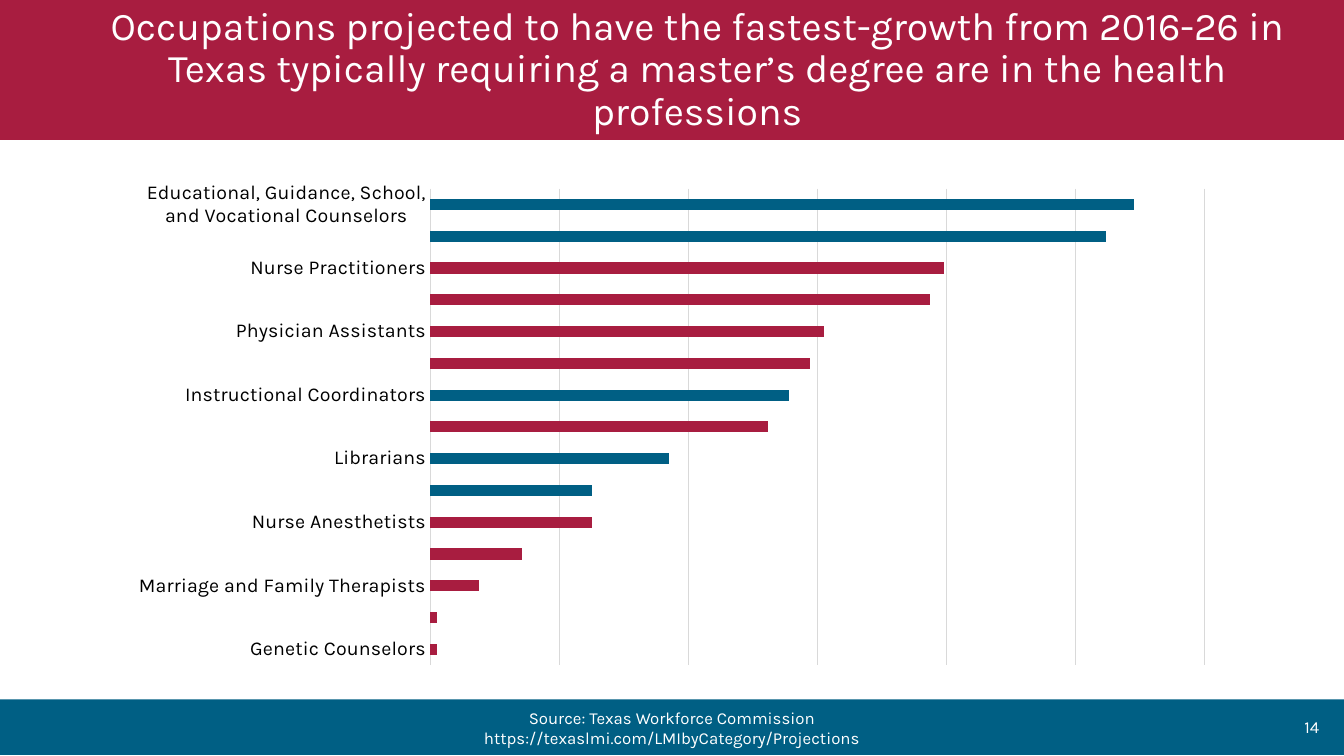
from lxml.etree import SubElement
from pptx import Presentation
from pptx.chart.data import CategoryChartData
from pptx.dml.color import RGBColor
from pptx.enum.chart import XL_CHART_TYPE, XL_TICK_LABEL_POSITION, XL_TICK_MARK
from pptx.enum.shapes import MSO_SHAPE
from pptx.enum.text import MSO_ANCHOR, MSO_AUTO_SIZE, PP_ALIGN
from pptx.oxml import parse_xml
from pptx.oxml.ns import nsdecls, qn
from pptx.util import Pt

CRIMSON = RGBColor(0xA8, 0x1D, 0x40)
TEAL = RGBColor(0x00, 0x5F, 0x84)
WHITE = RGBColor(0xFF, 0xFF, 0xFF)
BLACK = RGBColor(0x00, 0x00, 0x00)
GRID = RGBColor(0xD9, 0xD9, 0xD9)
FONT = "Karla"

TITLE = ("Occupations projected to have the fastest-growth from 2016-26 in Texas "
         "typically requiring a master’s degree are in the health professions")
SOURCE = "Source: Texas Workforce Commission https://texaslmi.com/LMIbyCategory/Projections"
PAGE_NUMBER = "14"

# label, projected growth, bar colour (bottom bar first; every second bar is unlabelled)
OCCUPATIONS = [
    ("Genetic Counselors", 1, CRIMSON),
    ("", 1, CRIMSON),
    ("Marriage and Family Therapists", 7, CRIMSON),
    ("", 13, CRIMSON),
    ("Nurse Anesthetists", 23, CRIMSON),
    ("", 23, TEAL),
    ("Librarians", 34, TEAL),
    ("", 48, CRIMSON),
    ("Instructional Coordinators", 51, TEAL),
    ("", 54, CRIMSON),
    ("Physician Assistants", 56, CRIMSON),
    ("", 71, CRIMSON),
    ("Nurse Practitioners", 73, CRIMSON),
    ("", 96, TEAL),
    ("Educational, Guidance, School, and Vocational Counselors", 100, TEAL),
]
AXIS_MAX = 110
GRID_STEPS = 6
PLOT_LAYOUT = {"x": 0.28, "y": 0.03, "w": 0.7, "h": 0.94}

# left, top, width, height in points
PAGE_WIDTH, PAGE_HEIGHT = 960, 540
TITLE_BAND = (0, 0, PAGE_WIDTH, 100)
FOOTER_BAND = (0, 499.6, PAGE_WIDTH, 39.6)
SOURCE_BOX = (283.5, 505.4, 393, 28.8)
NUMBER_BOX = (733.5, 505, 216, 28.8)
CHART_BOX = (86, 124, 790, 362)


def points(box):
    return [Pt(value) for value in box]


def set_format(target, values):
    for name, value in values.items():
        setattr(target, name, value)


def set_font(font, size, color):
    set_format(font, {"name": FONT, "size": Pt(size)})
    font.color.rgb = color


def paint(shape, color):
    shape.fill.solid()
    shape.fill.fore_color.rgb = color
    shape.line.fill.background()


def add_title(page):
    title = page.shapes.title
    set_format(title, dict(zip(("left", "top", "width", "height"), points(TITLE_BAND))))
    paint(title, CRIMSON)
    frame = title.text_frame
    frame.text = TITLE
    set_format(frame, {"word_wrap": True, "auto_size": MSO_AUTO_SIZE.NONE,
                       "vertical_anchor": MSO_ANCHOR.MIDDLE,
                       "margin_left": Pt(8), "margin_right": Pt(8)})
    para = frame.paragraphs[0]
    set_format(para, {"alignment": PP_ALIGN.CENTER, "line_spacing": 0.9})
    properties = para._p.get_or_add_pPr()
    properties.set("marL", str(Pt(36)))
    properties.set("indent", "0")
    set_font(para.runs[0].font, 28, WHITE)


def add_footer(page):
    band = page.shapes.add_shape(MSO_SHAPE.RECTANGLE, *points(FOOTER_BAND))
    band.shadow.inherit = False
    paint(band, TEAL)

    for text, box, align in ((SOURCE, SOURCE_BOX, PP_ALIGN.CENTER),
                             (PAGE_NUMBER, NUMBER_BOX, PP_ALIGN.RIGHT)):
        frame = page.shapes.add_textbox(*points(box)).text_frame
        set_format(frame, {"word_wrap": True, "vertical_anchor": MSO_ANCHOR.MIDDLE})
        para = frame.paragraphs[0]
        para.alignment = align
        span = para.add_run()
        span.text = text
        set_font(span.font, 12, WHITE)


def add_growth_chart(page):
    labels, growth, colors = zip(*OCCUPATIONS)
    data = CategoryChartData()
    data.categories = labels
    data.add_series("Series 1", growth)
    chart = page.shapes.add_chart(
        XL_CHART_TYPE.BAR_CLUSTERED, *points(CHART_BOX), data).chart
    set_format(chart, {"has_legend": False, "has_title": False})
    set_font(chart.font, 14, BLACK)

    plot = chart.plots[0]
    set_format(plot, {"gap_width": 182, "vary_by_categories": False})
    series = plot.series[0]
    series.format.fill.solid()
    series.format.fill.fore_color.rgb = CRIMSON
    for index, color in enumerate(colors):
        if color != CRIMSON:
            fill = series.points[index].format.fill
            fill.solid()
            fill.fore_color.rgb = color

    label_axis, growth_axis = chart.category_axis, chart.value_axis
    set_format(label_axis, {"major_tick_mark": XL_TICK_MARK.NONE,
                            "minor_tick_mark": XL_TICK_MARK.NONE,
                            "has_major_gridlines": False})
    set_font(label_axis.tick_labels.font, 14, BLACK)
    set_format(growth_axis, {"minimum_scale": 0, "maximum_scale": AXIS_MAX,
                             "major_unit": AXIS_MAX / GRID_STEPS,
                             "has_major_gridlines": True, "visible": False,
                             "tick_label_position": XL_TICK_LABEL_POSITION.NONE})
    for line in (label_axis.format.line, growth_axis.major_gridlines.format.line):
        line.color.rgb = GRID
        line.width = Pt(0.75)

    plot_area = chart._chartSpace.chart.plotArea
    for old_layout in plot_area.findall(qn("c:layout")):
        plot_area.remove(old_layout)
    layout = parse_xml(f'<c:layout {nsdecls("c")}><c:manualLayout/></c:layout>')
    settings = {"layoutTarget": "inner", "xMode": "edge", "yMode": "edge", **PLOT_LAYOUT}
    for name, value in settings.items():
        SubElement(layout[0], qn(f"c:{name}")).set("val", str(value))
    plot_area.insert(0, layout)


def main():
    deck = Presentation()
    set_format(deck, {"slide_width": Pt(PAGE_WIDTH), "slide_height": Pt(PAGE_HEIGHT)})
    page = deck.slides.add_slide(deck.slide_layouts[5])
    add_footer(page)
    add_title(page)
    add_growth_chart(page)
    deck.save("out.pptx")


if __name__ == "__main__":
    main()
